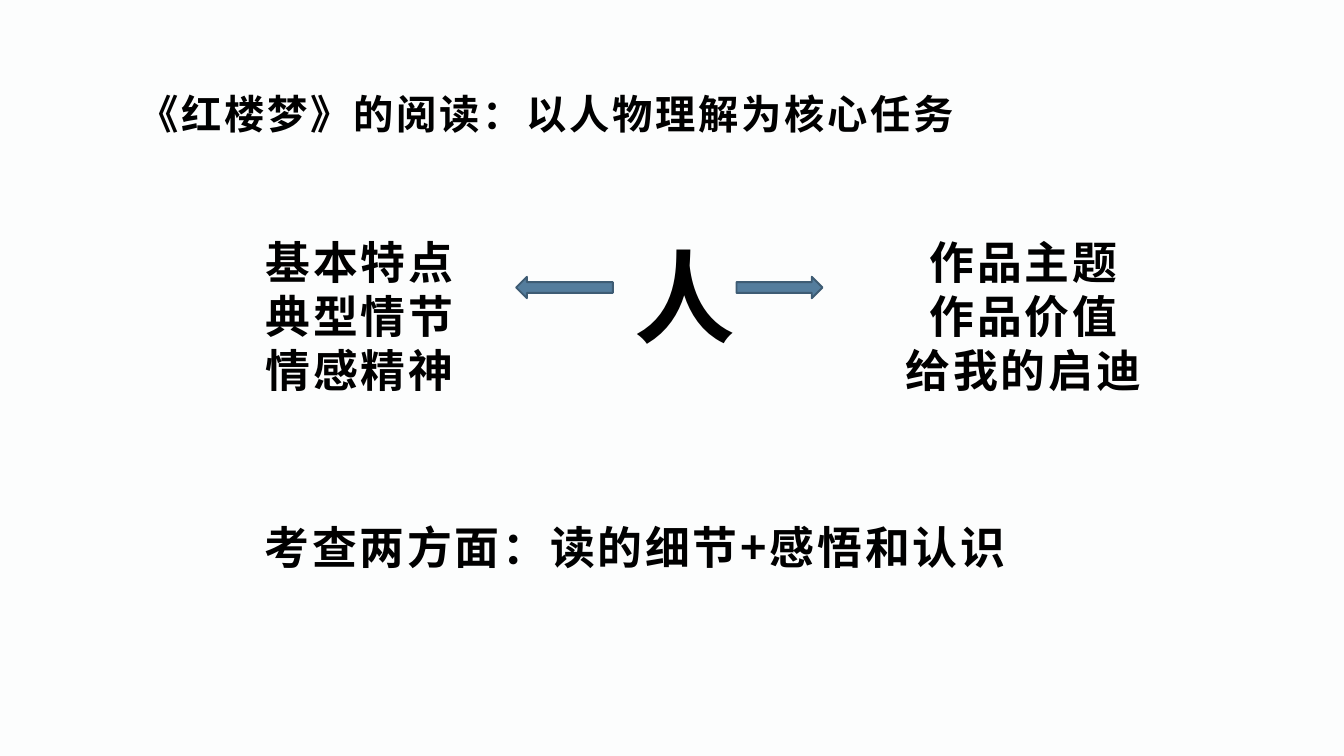
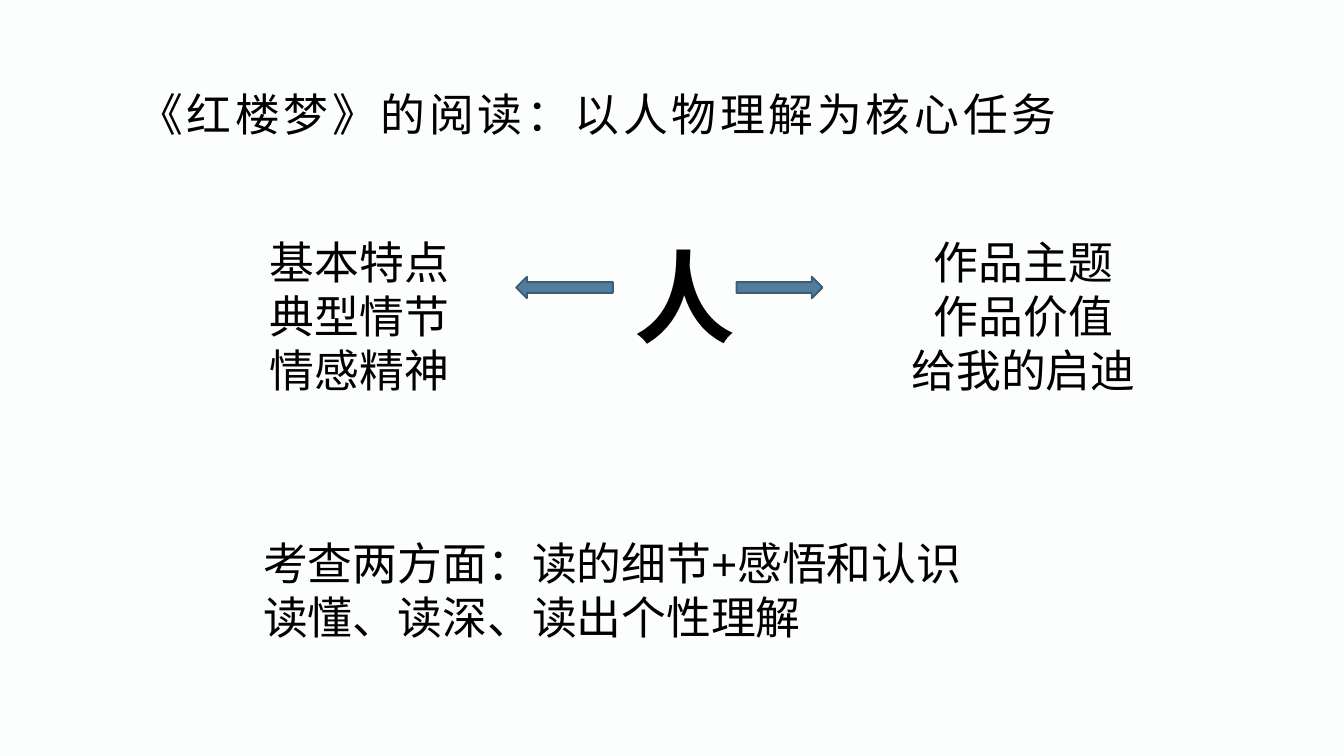
from pptx import Presentation, util as u
from pptx.dml.color import RGBColor
from pptx.enum import shapes, text
from lxml import etree

NS = "http://schemas.openxmlformats.org/drawingml/2006/main"
NOTO, ARIAL = "Noto Sans CJK SC", "Arial"
INK, PAPER, BLUE, EDGE = "000000", "FCFDFD", "547D9D", "3E5C74"
WIDE = 10
HIGH = WIDE * 9 / 16

TITLE = "《红楼梦》的阅读：以人物理解为核心任务"
CORE = "人"
LEFT = ["基本特点", "典型情节", "情感精神"]
RIGHT = ["作品主题", "作品价值", "给我的启迪"]
SUM = "考查两方面：读的细节+感悟和认识"
DEPTH = "读懂、读深、读出个性理解"

COLS = [(LEFT, (1.67, 1.7, 2.01, 1.31)), (RIGHT, (6.23, 1.7, 2.77, 1.31))]
ARROWS = [
    (shapes.MSO_SHAPE.RIGHT_ARROW, (5.48, 2.06, 0.64, 0.16)),
    (shapes.MSO_SHAPE.LEFT_ARROW, (3.84, 2.06, 0.72, 0.16)),
]
SLIDES = [
    dict(head=dict(size=21.6, font=NOTO, bold=True, gap=1.5),
         body=dict(font=NOTO, bold=True, gap=1.5),
         foot=[SUM], spot=(1.87, 3.82, 7.32, 0.5)),
    dict(head=dict(font=ARIAL, gap=2),
         body=dict(font=ARIAL),
         foot=[SUM, DEPTH], spot=(1.86, 3.94, 7.32, 1.31)),
]


def color(code):
    return RGBColor.from_string(code)


def place(box):
    return [u.Inches(n) for n in box]


def write(slide, lines, box, size=24, font=ARIAL, bold=False, gap=0,
          mid=False, center=False):
    frame = slide.shapes.add_textbox(*place(box)).text_frame
    frame.word_wrap = True
    frame.vertical_anchor = text.MSO_ANCHOR.MIDDLE if mid else text.MSO_ANCHOR.TOP
    for i, line in enumerate(lines):
        para = frame.add_paragraph() if i else frame.paragraphs[0]
        para.alignment = text.PP_ALIGN.CENTER if center else text.PP_ALIGN.LEFT
        para.line_spacing = u.Pt(size * 1.2)
        run = para.add_run()
        run.text = line
        run.font.size = u.Pt(size)
        run.font.bold = bold
        run.font.name = font
        run.font.color.rgb = color(INK)
        props = run._r.get_or_add_rPr()
        etree.SubElement(props, f"{{{NS}}}ea", typeface=font)
        if gap:
            props.set("spc", str(int(gap * 100)))


def arrow(slide, kind, box):
    shape = slide.shapes.add_shape(kind, *place(box))
    shape.shadow.inherit = False
    shape.fill.solid()
    shape.fill.fore_color.rgb = color(BLUE)
    shape.line.color.rgb = color(EDGE)
    shape.line.width = u.Pt(1)


def build(deck, head, body, foot, spot):
    slide = deck.slides.add_slide(deck.slide_layouts[6])
    fill = slide.background.fill
    fill.solid()
    fill.fore_color.rgb = color(PAPER)
    write(slide, [TITLE], (0.93, 0.64, 7.77, 0.41), mid=True, **head)
    (left, spot_l), (right, spot_r) = COLS
    write(slide, left, spot_l, center=True, **body)
    write(slide, [CORE], (4.55, 1.7, 1.09, 1.01), size=54, bold=True, center=True)
    for kind, box in ARROWS:
        arrow(slide, kind, box)
    write(slide, right, spot_r, center=True, **body)
    write(slide, foot, spot, **body)


def main():
    deck = Presentation()
    deck.slide_width, deck.slide_height = place((WIDE, HIGH))
    for item in SLIDES:
        build(deck, **item)
    deck.save("out.pptx")


if __name__ == "__main__":
    main()
